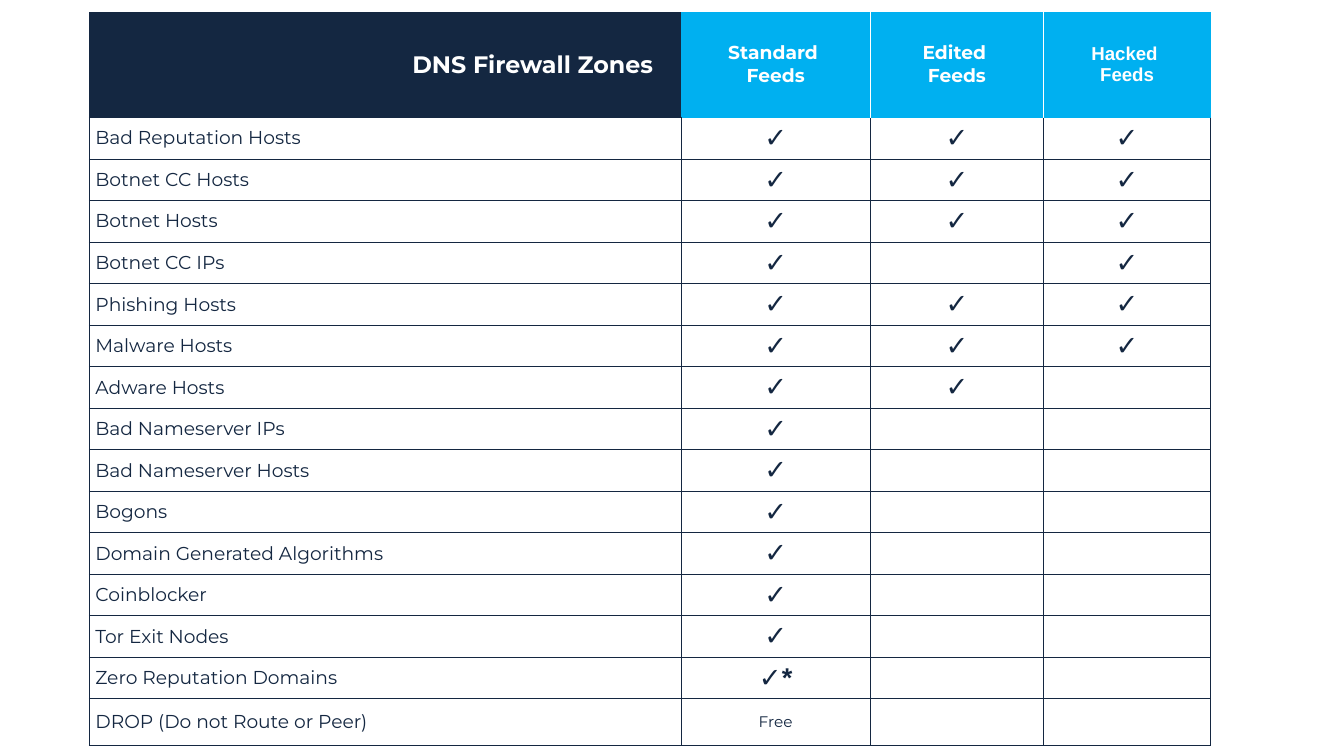
from lxml.etree import SubElement
from pptx import Presentation
from pptx.dml.color import RGBColor
from pptx.enum.text import MSO_ANCHOR, PP_ALIGN
from pptx.oxml.ns import qn
from pptx.util import Pt

NAVY, BLUE, WHITE = "142741", "00B0F0", "FFFFFF"
NO_STYLE = "{2D5ABB26-0587-4C30-8999-92F81FD0307C}"
COLUMN_WIDTHS = [697, 223.2, 203.8, 197.2]
HEADER_HEIGHT, ROW_HEIGHT, LAST_HEIGHT = 124.6, 48.9, 54.7
TICK = "✓"

FEEDS = [
    ("Standard \nFeeds", "Montserrat", "R"),
    ("Edited \nFeeds", "Montserrat", "LR"),
    ("Hacked \nFeeds", "Arial", "L"),
]
ZONES = [
    ("Bad Reputation Hosts", TICK, TICK, TICK),
    ("Botnet CC Hosts", TICK, TICK, TICK),
    ("Botnet Hosts", TICK, TICK, TICK),
    ("Botnet CC IPs", TICK, "", TICK),
    ("Phishing Hosts", TICK, TICK, TICK),
    ("Malware Hosts", TICK, TICK, TICK),
    ("Adware Hosts", TICK, TICK, ""),
    ("Bad Nameserver IPs", TICK, "", ""),
    ("Bad Nameserver Hosts", TICK, "", ""),
    ("Bogons", TICK, "", ""),
    ("Domain Generated Algorithms", TICK, "", ""),
    ("Coinblocker", TICK, "", ""),
    ("Tor Exit Nodes", TICK, "", ""),
    ("Zero Reputation Domains", TICK + "*", "", ""),
    ("DROP (Do not Route or Peer)", "Free", "", ""),
]


def color(value):
    return RGBColor.from_string(value)


def write_text(frame, text, size=22, font="Montserrat", ink=NAVY, bold=False,
               align=PP_ALIGN.CENTER):
    """Fill a text frame, one paragraph for each line of text."""
    for index, line in enumerate(text.split("\n")):
        para = frame.paragraphs[0] if index == 0 else frame.add_paragraph()
        para.alignment = align
        span = para.add_run()
        span.text = line
        span.font.size = Pt(size)
        span.font.name = font
        span.font.bold = bold
        span.font.color.rgb = color(ink)


class SlideWriter:
    def __init__(self, page, line_width=1):
        self.page = page
        self.line_width = line_width

    def table(self, left, top, widths, heights):
        frame = self.page.shapes.add_table(
            len(heights), len(widths), Pt(left), Pt(top), Pt(sum(widths)), Pt(sum(heights)))
        table = frame.table
        table.first_row = table.horz_banding = False
        table._tbl.tblPr.find(qn("a:tableStyleId")).text = NO_STYLE
        for column, width in zip(table.columns, widths):
            column.width = Pt(width)
        for row, height in zip(table.rows, heights):
            row.height = Pt(height)
        return table

    def cell(self, cell, text, sides, line_color=NAVY, fill=None, **text_format):
        """Style one cell; sides names its bordered edges, in the order LRTB."""
        properties = cell._tc.get_or_add_tcPr()
        for side in sides:
            line = SubElement(properties, qn("a:ln" + side), w=str(Pt(self.line_width)))
            solid = SubElement(line, qn("a:solidFill"))
            SubElement(solid, qn("a:srgbClr"), val=line_color)
        if fill:
            cell.fill.solid()
            cell.fill.fore_color.rgb = color(fill)
        else:
            cell.fill.background()
        cell.vertical_anchor = MSO_ANCHOR.MIDDLE
        if text:
            write_text(cell.text_frame, text, **text_format)


def zone_format(text, column):
    if column == 0:
        return {"align": PP_ALIGN.LEFT}
    if text.startswith(TICK):
        return {"size": 32, "font": "Arial", "bold": True}
    return {"size": 18}


def main():
    deck = Presentation()
    deck.slide_width, deck.slide_height = Pt(1583.3), Pt(890.6)
    writer = SlideWriter(deck.slides.add_slide(deck.slide_layouts[6]))
    heights = [HEADER_HEIGHT] + [ROW_HEIGHT] * (len(ZONES) - 1) + [LAST_HEIGHT]
    table = writer.table(105.2, 13.9, COLUMN_WIDTHS, heights)

    title = table.cell(0, 0)
    writer.cell(title, "DNS Firewall Zones", "B", fill=NAVY, size=28, ink=WHITE,
                bold=True, align=PP_ALIGN.RIGHT)
    title.margin_right = Pt(33)
    for column, (name, font, sides) in enumerate(FEEDS, start=1):
        writer.cell(table.cell(0, column), name, sides, line_color=WHITE, fill=BLUE,
                    font=font, ink=WHITE, bold=True)

    for row, zone in enumerate(ZONES, start=1):
        for column, text in enumerate(zone):
            sides = "LRB" if row == 1 and column > 0 else "LRTB"
            writer.cell(table.cell(row, column), text, sides, **zone_format(text, column))

    deck.save("out.pptx")


if __name__ == "__main__":
    main()
